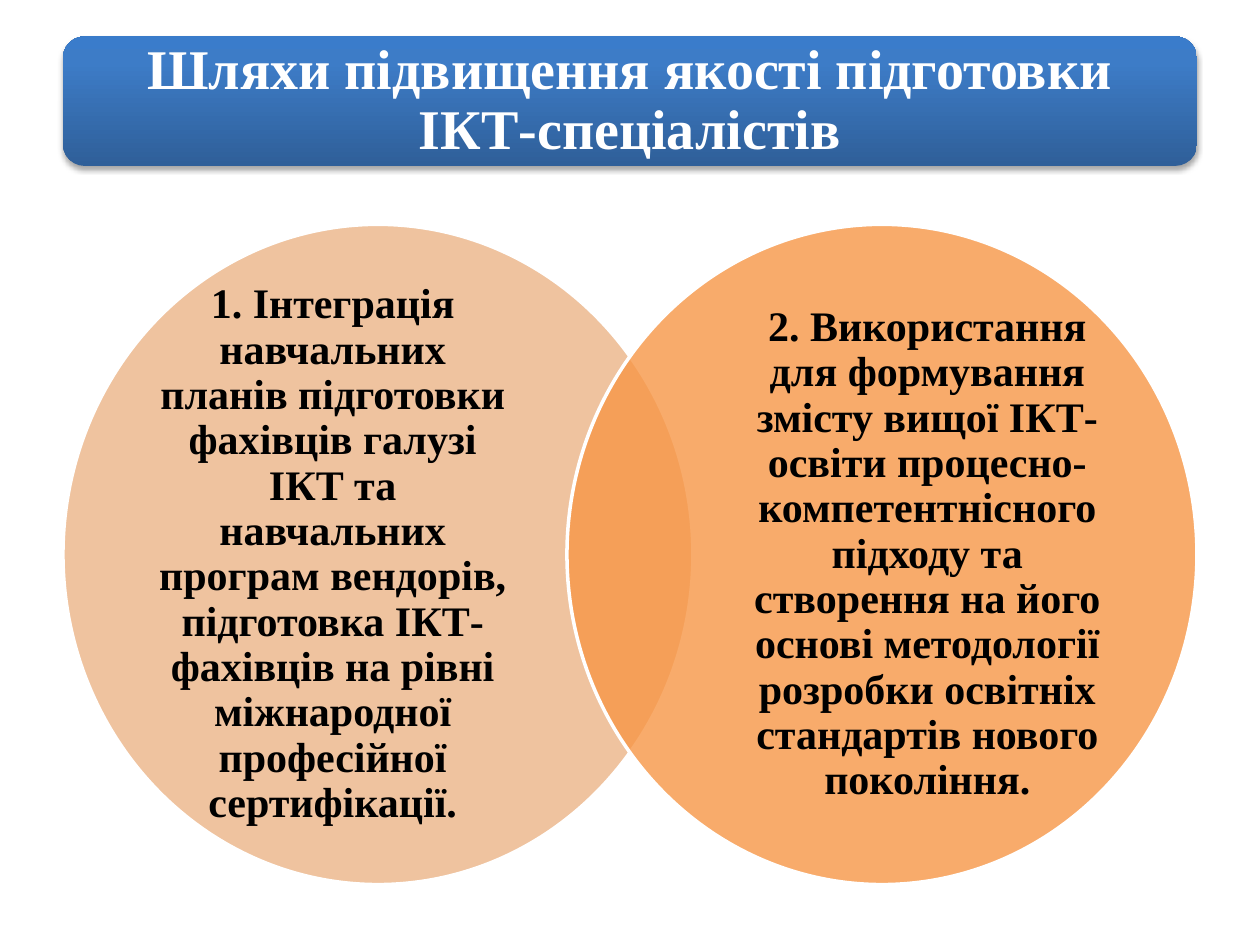
from pptx import Presentation
from pptx import oxml
from pptx.dml.color import RGBColor
from pptx.enum import shapes, text
from pptx.oxml import ns
from pptx.util import Pt

WHITE = RGBColor(0xFF, 0xFF, 0xFF)
BLACK = RGBColor(0, 0, 0)
SAND = RGBColor(0xE0, 0x88, 0x40)
ORANGE = RGBColor(0xF7, 0x97, 0x47)
BANNER_STOPS = [
    (0, RGBColor(0x2F, 0x5F, 0x99)),
    (80, RGBColor(0x3D, 0x7C, 0xC7)),
    (100, RGBColor(0x3A, 0x7C, 0xCB)),
]

HEADING = "Шляхи підвищення якості підготовки ІКТ-спеціалістів"
WAYS = [
    ("1. Інтеграція навчальних планів підготовки фахівців галузі ІКТ та "
     "навчальних програм вендорів, підготовка ІКТ-фахівців на рівні "
     "міжнародної професійної сертифікації.", SAND, 50, 50.4),
    ("2. Використання для формування змісту вищої ІКТ-освіти "
     "процесно-компетентнісного підходу та створення на його основі "
     "методології розробки освітніх стандартів нового покоління.",
     ORANGE, 80, 102.2),
]


def apply(target, formats):
    """Set every attribute named in formats on target."""
    for name, value in formats.items():
        setattr(target, name, value)


def place(part, left, top, width, height):
    """Move and size a part, in points."""
    apply(part, {"left": Pt(left), "top": Pt(top),
                 "width": Pt(width), "height": Pt(height)})


def write(part, wording, size, color, inset):
    """Fill a part with one bold centred paragraph."""
    frame = part.text_frame
    margins = {f"margin_{side}": Pt(inset)
               for side in ("left", "top", "right", "bottom")}
    apply(frame, {"text": wording, "word_wrap": True,
                  "auto_size": text.MSO_AUTO_SIZE.NONE,
                  "vertical_anchor": text.MSO_ANCHOR.MIDDLE, **margins})
    paragraph = frame.paragraphs[0]
    apply(paragraph, {"alignment": text.PP_ALIGN.CENTER, "line_spacing": 0.9})
    font = paragraph.runs[0].font
    apply(font, {"name": "Times New Roman", "size": Pt(size), "bold": True})
    font.color.rgb = color


def add_heading(slide, left, top, width, height):
    """Put the title on a shaded, rounded banner."""
    banner = slide.shapes.add_shape(
        shapes.MSO_SHAPE.ROUNDED_RECTANGLE,
        Pt(left), Pt(top), Pt(width), Pt(height))
    banner.line.fill.background()
    properties = banner._element.spPr
    stops = "".join(
        f'<a:gs pos="{position * 1000}"><a:srgbClr val="{color}"/></a:gs>'
        for position, color in BANNER_STOPS)
    gradient = oxml.parse_xml(
        f'<a:gradFill {ns.nsdecls("a")} rotWithShape="1"><a:gsLst>{stops}'
        '</a:gsLst><a:lin ang="16200000" scaled="0"/></a:gradFill>')
    properties.find(ns.qn("a:ln")).addprevious(gradient)
    properties.append(oxml.parse_xml(
        f'<a:effectLst {ns.nsdecls("a")}><a:outerShdw blurRad="{Pt(3.1)}" '
        f'dist="{Pt(1.8)}" dir="5400000" rotWithShape="0">'
        '<a:srgbClr val="000000"><a:alpha val="35000"/></a:srgbClr>'
        '</a:outerShdw></a:effectLst>'))
    title = slide.shapes.title
    title._element.addprevious(banner._element)
    pad = 3.6
    place(title, left + pad, top + pad, width - 2 * pad, height - 2 * pad)
    write(title, HEADING, 32, WHITE, 9.6)


def add_way(slide, left, top, width, height, way):
    """Draw one translucent circle of the pair with its wording."""
    wording, color, opacity, indent = way
    circle = slide.shapes.add_shape(
        shapes.MSO_SHAPE.OVAL, Pt(left), Pt(top), Pt(width), Pt(height))
    circle.shadow.inherit = False
    circle.fill.solid()
    circle.fill.fore_color.rgb = color
    tint = circle._element.spPr.find(f'{ns.qn("a:solidFill")}/{ns.qn("a:srgbClr")}')
    tint.append(oxml.parse_xml(
        f'<a:alpha {ns.nsdecls("a")} val="{opacity * 1000}"/>'))
    circle.line.color.rgb = WHITE
    circle.line.width = Pt(2)
    label_height = 288.7
    label = slide.shapes.add_textbox(
        Pt(left + indent), Pt(top + (height - label_height) / 2),
        Pt(207.4), Pt(label_height))
    write(label, wording, 24, BLACK, 0)


def add_pair(slide, left, top, width, height):
    """Lay the two overlapping circles across the box."""
    diameter = 360
    step = width - diameter
    for index, way in enumerate(WAYS):
        add_way(slide, left + index * step, top, diameter, height, way)


def main():
    """Build and save the slide."""
    deck = Presentation()
    apply(deck, {"slide_width": Pt(720), "slide_height": Pt(540)})
    slide = deck.slides.add_slide(deck.slide_layouts.get_by_name("Title Only"))
    add_heading(slide, 36, 20.8, 648, 74)
    add_pair(slide, 36, 128.2, 648, 377.3)
    deck.save("out.pptx")


if __name__ == "__main__":
    main()
